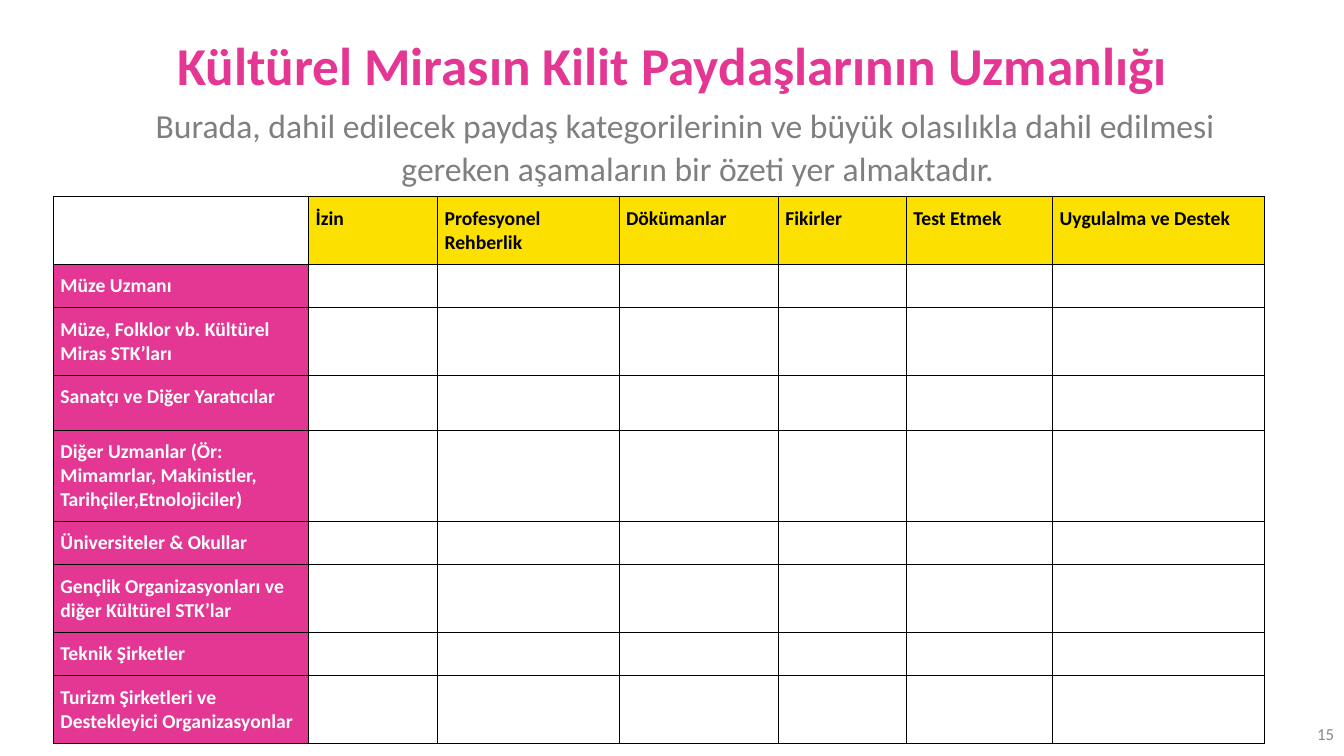
import pptx
import pptx.dml.color
import pptx.enum.text
import pptx.oxml
import pptx.oxml.ns
import pptx.util

Inches = pptx.util.Inches
Pt = pptx.util.Pt
ALIGN = pptx.enum.text.PP_ALIGN
ANCHOR = pptx.enum.text.MSO_ANCHOR

PINK, YELLOW, BLACK, WHITE = "E43794", "FBE000", "000000", "FFFFFF"
STAGES = ["İzin", "Profesyonel Rehberlik", "Dökümanlar", "Fikirler",
          "Test Etmek", "Uygulalma ve Destek"]
GROUPS = ["Müze Uzmanı", "Müze, Folklor vb. Kültürel Miras STK’ları",
          "Sanatçı ve Diğer Yaratıcılar",
          "Diğer Uzmanlar (Ör: Mimamrlar, Makinistler, Tarihçiler,Etnolojiciler)",
          "Üniversiteler & Okullar",
          "Gençlik Organizasyonları ve diğer Kültürel STK’lar",
          "Teknik Şirketler",
          "Turizm Şirketleri ve Destekleyici Organizasyonlar"]
WIDTHS = [2.53, 1.28, 1.8, 1.58, 1.27, 1.45, 2.1]
HEIGHTS = [0.6, 0.42, 0.63, 0.55, 0.8, 0.42, 0.6, 0.42, 0.6]


def paint(code):
    return pptx.dml.color.RGBColor.from_string(code)


class Board:
    """Holds the current slide and its text style."""

    face = "Calibri"

    def __init__(self, slide):
        self.slide = slide

    def style(self, para, size, color, bold=False):
        for run in para.runs:
            run.font.name = self.face
            run.font.size = Pt(size)
            run.font.bold = bold
            run.font.color.rgb = paint(color)

    def text(self, words, box, size, color, align, bold=False):
        shape = self.slide.shapes.add_textbox(*map(Inches, box))
        frame = shape.text_frame
        frame.word_wrap = True
        frame.text = words
        para = frame.paragraphs[0]
        para.alignment = align
        self.style(para, size, color, bold)
        return frame

    def edge(self, cell):
        """Draw a thin black line on all four sides of a cell."""
        props = cell._tc.get_or_add_tcPr()
        for side in ("lnL", "lnR", "lnT", "lnB"):
            props.append(pptx.oxml.parse_xml(
                f'<a:{side} {pptx.oxml.ns.nsdecls("a")} w="{Pt(0.5)}">'
                f'<a:solidFill><a:srgbClr val="{BLACK}"/></a:solidFill>'
                f'</a:{side}>'))

    def label(self, cell, words, fill, color):
        cell.margin_left = cell.margin_right = Inches(0.07)
        cell.margin_top = cell.margin_bottom = Inches(0.1)
        cell.fill.solid()
        cell.fill.fore_color.rgb = paint(fill)
        cell.text_frame.text = words
        self.style(cell.text_frame.paragraphs[0], 14, color, True)

    def table(self, left, top):
        size = map(Inches, (left, top, sum(WIDTHS), sum(HEIGHTS)))
        grid = self.slide.shapes.add_table(
            len(HEIGHTS), len(WIDTHS), *size).table
        grid.horz_banding = False
        grid.first_row = False
        for col, width in zip(grid.columns, WIDTHS):
            col.width = Inches(width)
        for row, height in zip(grid.rows, HEIGHTS):
            row.height = Inches(height)
        for cell in grid.iter_cells():
            self.edge(cell)
            cell.fill.background()
        for col, words in enumerate(STAGES, 1):
            self.label(grid.cell(0, col), words, YELLOW, BLACK)
        for row, words in enumerate(GROUPS, 1):
            self.label(grid.cell(row, 0), words, PINK, WHITE)


def main():
    deck = pptx.Presentation()
    deck.slide_width, deck.slide_height = Inches(13.33), Inches(7.5)
    board = Board(deck.slides.add_slide(deck.slide_layouts[6]))

    title = board.text("Kültürel Mirasın Kilit Paydaşlarının Uzmanlığı",
                       (0.33, 0.34, 12.68, 0.69), 38, PINK, ALIGN.CENTER, True)
    title.paragraphs[0].line_spacing = 0.9

    intro = board.text(
        "Burada, dahil edilecek paydaş kategorilerinin ve büyük olasılıkla "
        "dahil edilmesi gereken aşamaların bir özeti yer almaktadır.",
        (0.67, 0.96, 12, 0.88), 24, "7F7F7F", ALIGN.CENTER)
    para = intro.paragraphs[0]
    para.line_spacing = 1.07
    para.space_after = Pt(8)
    props = para._p.get_or_add_pPr()
    props.set("marL", str(Inches(0.5)))
    props.set("indent", str(Inches(-0.25)))

    board.table(0.53, 1.95)

    number = board.text("15", (8.63, 7.15, 4.7, 0.25), 12, "888888",
                        ALIGN.RIGHT)
    number.vertical_anchor = ANCHOR.MIDDLE
    deck.save("out.pptx")


if __name__ == "__main__":
    main()
